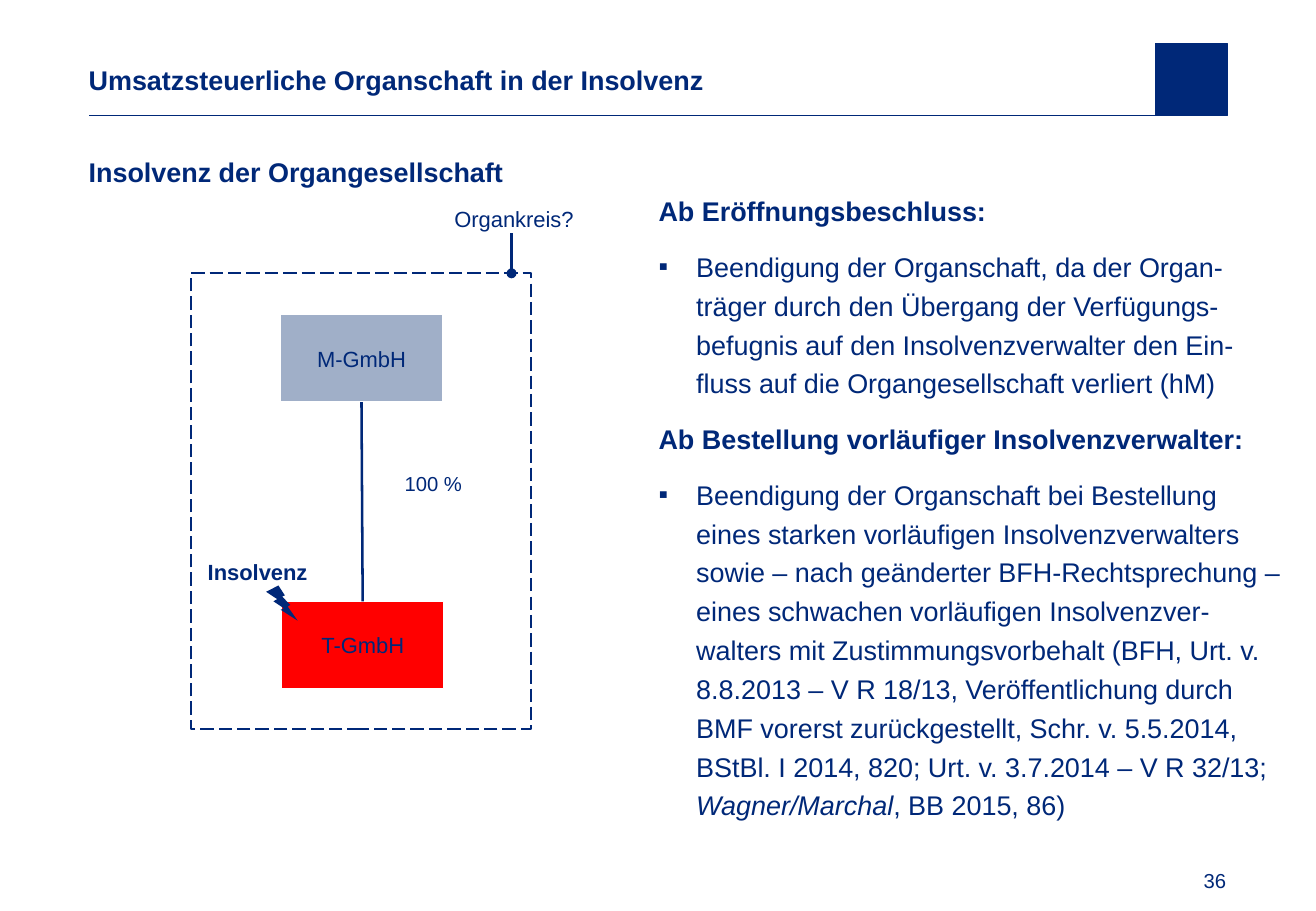
from pptx import Presentation
from pptx import util as u
from pptx.dml.color import RGBColor
from pptx.enum import dml, shapes, text
from pptx.oxml.ns import qn
from lxml import etree

NAVY, WHITE, RED, GREY = "002878", "FFFFFF", "FF0000", "A0AFC8"
SCALE = 9144
LEFT, MID, RIGHT = text.PP_ALIGN.LEFT, text.PP_ALIGN.CENTER, text.PP_ALIGN.RIGHT
TOP, CENTRE, BOTTOM = (text.MSO_ANCHOR.TOP, text.MSO_ANCHOR.MIDDLE,
                       text.MSO_ANCHOR.BOTTOM)
RECT = shapes.MSO_SHAPE.RECTANGLE
BOLT = shapes.MSO_SHAPE.LIGHTNING_BOLT

TITLE = "Umsatzsteuerliche Organschaft in der Insolvenz"
TOPIC = [("head", ["Insolvenz der Organgesellschaft"])]
POINTS = [
    ("head", ["Ab Eröffnungsbeschluss:"]),
    ("item", ["Beendigung der Organschaft, da der Organ-träger durch den "
              "Übergang der Verfügungs-befugnis auf den Insolvenzverwalter "
              "den Ein-fluss auf die Organgesellschaft verliert (hM)"]),
    ("head", ["Ab Bestellung vorläufiger Insolvenzverwalter:"]),
    ("item", ["Beendigung der Organschaft bei Bestellung eines starken "
              "vorläufigen Insolvenzverwalters sowie – nach geänderter "
              "BFH-Rechtsprechung – eines schwachen vorläufigen "
              "Insolvenzver-walters mit Zustimmungsvorbehalt (BFH, Urt. v. "
              "8.8.2013 – V R 18/13, Veröffentlichung durch BMF vorerst "
              "zurückgestellt, Schr. v. 5.5.2014, BStBl. I 2014, 820; "
              "Urt. v. 3.7.2014 – V R 32/13; ",
              "Wagner/Marchal", ", BB 2015, 86)"]),
]

deck = Presentation()
deck.slide_width, deck.slide_height = 1083 * SCALE, 750 * SCALE
slide = deck.slides.add_slide(deck.slide_layouts[6])


def px(*nums):
    return [n * SCALE for n in nums]


def rgb(code):
    return RGBColor.from_string(code)


def style(para, size, bold=False):
    font = para.font
    font.name, font.size, font.bold = "Arial", u.Pt(size), bold
    font.color.rgb = rgb(NAVY)


def setup(frame, anchor, wrap=True):
    frame.word_wrap, frame.vertical_anchor = wrap, anchor
    frame.margin_left = frame.margin_right = 0
    frame.margin_top = frame.margin_bottom = 0


def write(frame, words, size, bold=False, align=LEFT, anchor=TOP, wrap=True):
    setup(frame, anchor, wrap)
    para = frame.paragraphs[0]
    para.text, para.alignment = words, align
    style(para, size, bold)


def label(area, words, size, **look):
    box = slide.shapes.add_textbox(*px(*area))
    write(box.text_frame, words, size, **look)


def block(area, fill, line=None, width=0.75, kind=RECT):
    shape = slide.shapes.add_shape(kind, *px(*area))
    shape.shadow.inherit = False
    shape.fill.solid()
    shape.fill.fore_color.rgb = rgb(fill)
    if line:
        shape.line.color.rgb = rgb(line)
        shape.line.width = u.Pt(width)
    else:
        shape.line.fill.background()
    return shape


def rule(ends, width):
    line = slide.shapes.add_connector(shapes.MSO_CONNECTOR.STRAIGHT, *px(*ends))
    line.line.color.rgb = rgb(NAVY)
    line.line.width = u.Pt(width)
    etree.SubElement(line._element.spPr, qn("a:effectLst"))
    return line


def prose(area, paras):
    frame = slide.shapes.add_textbox(*px(*area)).text_frame
    setup(frame, TOP)
    for i, (kind, runs) in enumerate(paras):
        para = frame.add_paragraph() if i else frame.paragraphs[0]
        para.line_spacing = 1.2
        para.space_before = u.Pt(10 if i else 0)
        if kind == "item":
            props = para._p.get_or_add_pPr()
            props.set("marL", str(31 * SCALE))
            props.set("indent", str(-31 * SCALE))
            etree.SubElement(props, qn("a:buFont"), typeface="Arial")
            etree.SubElement(props, qn("a:buChar"), char="▪")
        style(para, 16, kind == "head")
        for n, words in enumerate(runs):
            run = para.add_run()
            run.text = words
            if n == 1:
                run.font.italic = True


block((951, 36, 59, 59), NAVY, NAVY, 0.5)
rule((1010, 95, 73, 95), 0.5)
label((957, 710, 52, 25), "36", 12, align=RIGHT, anchor=BOTTOM, wrap=False)
label((73, 36, 840, 59), TITLE, 16, bold=True, anchor=CENTRE)
prose((73, 123, 429, 555), TOPIC)

circle = block((157, 225, 280, 375), WHITE, NAVY, 1)
circle.line.dash_style = dml.MSO_LINE.LONG_DASH
tag = block((373, 169, 100, 22), WHITE, WHITE)
write(tag.text_frame, "Organkreis?", 13, align=MID, anchor=CENTRE, wrap=False)
pin = rule((421, 225, 421, 192), 1.5)
etree.SubElement(pin.line._get_or_add_ln(), qn("a:headEnd"), type="oval")

firms = []
for name, area, fill in [("M-GmbH", (231, 259, 133, 72), GREY),
                         ("T-GmbH", (232, 495, 133, 72), RED)]:
    firm = block(area, fill, WHITE)
    write(firm.text_frame, name, 13, align=MID, anchor=CENTRE)
    firms.append(firm)
stake = rule((298, 495, 297, 331), 1.5)
stake.begin_connect(firms[1], 0)
stake.end_connect(firms[0], 2)
label((333, 388, 102, 20), "100 %", 12)

prose((542, 155, 516, 573), POINTS)
block((219, 482, 26, 29), NAVY, kind=BOLT)
label((171, 460, 213, 22), "Insolvenz", 13, bold=True)

deck.save("out.pptx")
